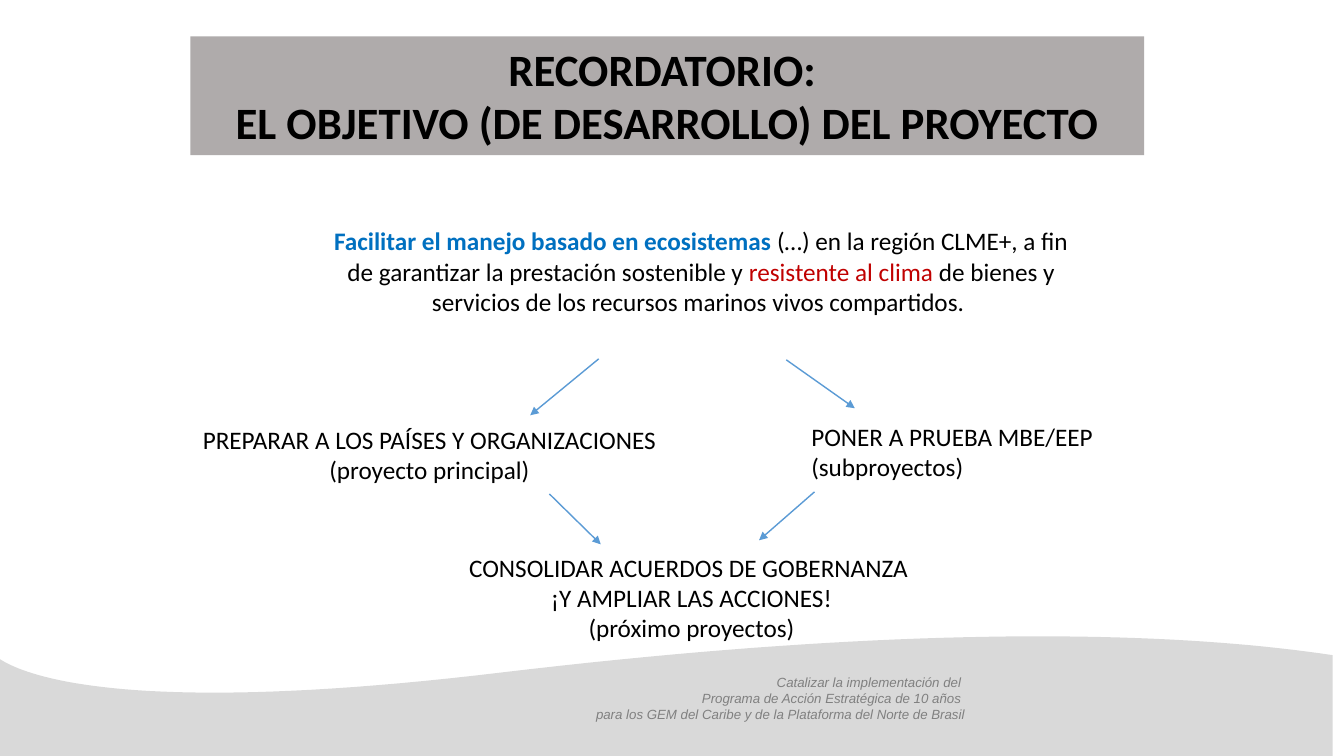
from lxml.etree import SubElement
from pptx import Presentation
from pptx.dml.color import RGBColor
from pptx.enum.shapes import MSO_CONNECTOR, MSO_SHAPE
from pptx.enum.text import MSO_ANCHOR, PP_ALIGN
from pptx.oxml.ns import qn
from pptx.util import Inches, Pt

COLORS = {"wave": "D9D9D9", "banner": "AFABAB", "arrow": "5B9BD5", "text": "000000",
          "blue": "0070C0", "red": "C00000", "footer": "808080"}
CELL = Inches(0.1)
TITLE = {"name": "Calibri", "size": Pt(32), "bold": True}
BODY = {"name": "Calibri", "size": Pt(18)}
FOOTER = {"name": "Arial", "size": Pt(9.5), "italic": True}


def cells(*lengths):
    """Turn grid columns and rows into slide units."""
    return [round(n * CELL) for n in lengths]


def within(box, x, y, w, h):
    """Return a part's box from its offset in a region."""
    return box[0] + x, box[1] + y, w, h


def paint(shape, color):
    """Give a shape a plain fill without line or shadow."""
    shape.fill.solid()
    shape.fill.fore_color.rgb = RGBColor.from_string(COLORS[color])
    shape.line.fill.background()
    shape.shadow.inherit = False


def write(shape, lines, font, align=PP_ALIGN.CENTER, color="text"):
    """Fill a shape with paragraphs of (text, color, bold) runs or plain strings."""
    tf = shape.text_frame
    tf.word_wrap = True
    tf.vertical_anchor = MSO_ANCHOR.TOP
    for i, line in enumerate(lines):
        p = tf.paragraphs[0] if i == 0 else tf.add_paragraph()
        p.alignment = align
        runs = [(line, color, None)] if isinstance(line, str) else line
        for text, run_color, bold in runs:
            r = p.add_run()
            r.text = text
            formats = font if bold is None else {**font, "bold": bold}
            for name, value in formats.items():
                setattr(r.font, name, value)
            r.font.color.rgb = RGBColor.from_string(COLORS[run_color])


def arrow(s, box, start, end):
    """Draw an arrow between two offsets in a region."""
    ends = [box[i % 2] + n for i, n in enumerate(start + end)]
    line = s.shapes.add_connector(MSO_CONNECTOR.STRAIGHT, *cells(*ends))
    line.line.width = Pt(1)
    line.line.color.rgb = RGBColor.from_string(COLORS["arrow"])
    SubElement(line.line._get_or_add_ln(), qn("a:tailEnd"), type="triangle")
    SubElement(line._element.spPr, qn("a:effectLst"))


def curve(a, b, c, d, steps=40):
    """Return points along a cubic curve, without its start."""
    ts = [i / steps for i in range(1, steps + 1)]
    return [tuple((1 - t) ** 3 * m + 3 * t * (1 - t) ** 2 * n + 3 * t * t * (1 - t) * o + t ** 3 * q
                  for m, n, o, q in zip(a, b, c, d)) for t in ts]


def add_footer(s, box):
    """Draw the wave and the project line on it."""
    x, y, w, h = box
    right, middle, left = (w, 3), (49.9, 4.7), (0, 3.4)
    edge = curve(right, (115.6, 0.5), (89.5, 0), middle)
    edge += curve(middle, (13.4, 9.1), (2.8, 5.2), left)
    outline = [cells(x + px, y + py) for px, py in [(w, h), right, *edge, (0, h)]]
    builder = s.shapes.build_freeform(*outline[0])
    builder.add_line_segments(outline[1:], close=True)
    paint(builder.convert_to_shape(), "wave")
    tb = s.shapes.add_textbox(*cells(*within(box, 57.6, 4.4, 39.1, 5.8)))
    write(tb, ["Catalizar la implementación del ",
               "Programa de Acción Estratégica de 10 años ",
               "para los GEM del Caribe y de la Plataforma del Norte de Brasil"],
          FOOTER, PP_ALIGN.RIGHT, "footer")


def add_title(s, box):
    """Draw the title banner."""
    sp = s.shapes.add_shape(MSO_SHAPE.RECTANGLE, *cells(*box))
    paint(sp, "banner")
    write(sp, ["RECORDATORIO: ", "EL OBJETIVO (DE DESARROLLO) DEL PROYECTO"], TITLE)


def add_diagram(s, box):
    """Draw the goal, its two branches and the outcome, joined by arrows."""
    goal = [("Facilitar el manejo basado en ecosistemas ", "blue", True),
            ("(…) en la región CLME+, a fin de garantizar la prestación sostenible y ", "text", False),
            ("resistente al clima ", "red", False),
            ("de bienes y servicios de los recursos marinos vivos compartidos. ", "text", False)]
    steps = [
        ((12.4, 0, 76.5, 10.1), [goal], PP_ALIGN.CENTER),
        ((0, 19.7, 47.4, 7.1),
         ["PREPARAR A LOS PAÍSES Y ORGANIZACIONES", "(proyecto principal)"], PP_ALIGN.CENTER),
        ((60.6, 19.4, 30, 7.1), ["PONER A PRUEBA MBE/EEP", "(subproyectos)"], PP_ALIGN.LEFT),
        ((22.8, 32.4, 53.8, 10.1),
         ["CONSOLIDAR ACUERDOS DE GOBERNANZA ", "¡Y AMPLIAR LAS ACCIONES!",
          "(próximo proyectos)"], PP_ALIGN.CENTER),
    ]
    for place, lines, align in steps:
        write(s.shapes.add_textbox(*cells(*within(box, *place))), lines, BODY, align)
    for start, end in [((40.5, 13.7), (33.7, 19.3)), ((59.1, 13.8), (65.9, 18.6)),
                       ((35.6, 27.1), (40.7, 32.1)), ((61.9, 26.9), (56.4, 31.7))]:
        arrow(s, box, start, end)


def main():
    """Build and save the slide."""
    prs = Presentation()
    prs.slide_width, prs.slide_height = cells(133.33, 75)
    s = prs.slides.add_slide(prs.slide_layouts[6])
    add_footer(s, (0, 62, 132.2, 13))
    add_title(s, (18.9, 3.6, 94.6, 11.8))
    add_diagram(s, (18.9, 21.9, 94.6, 42.5))
    prs.save("out.pptx")


if __name__ == "__main__":
    main()
